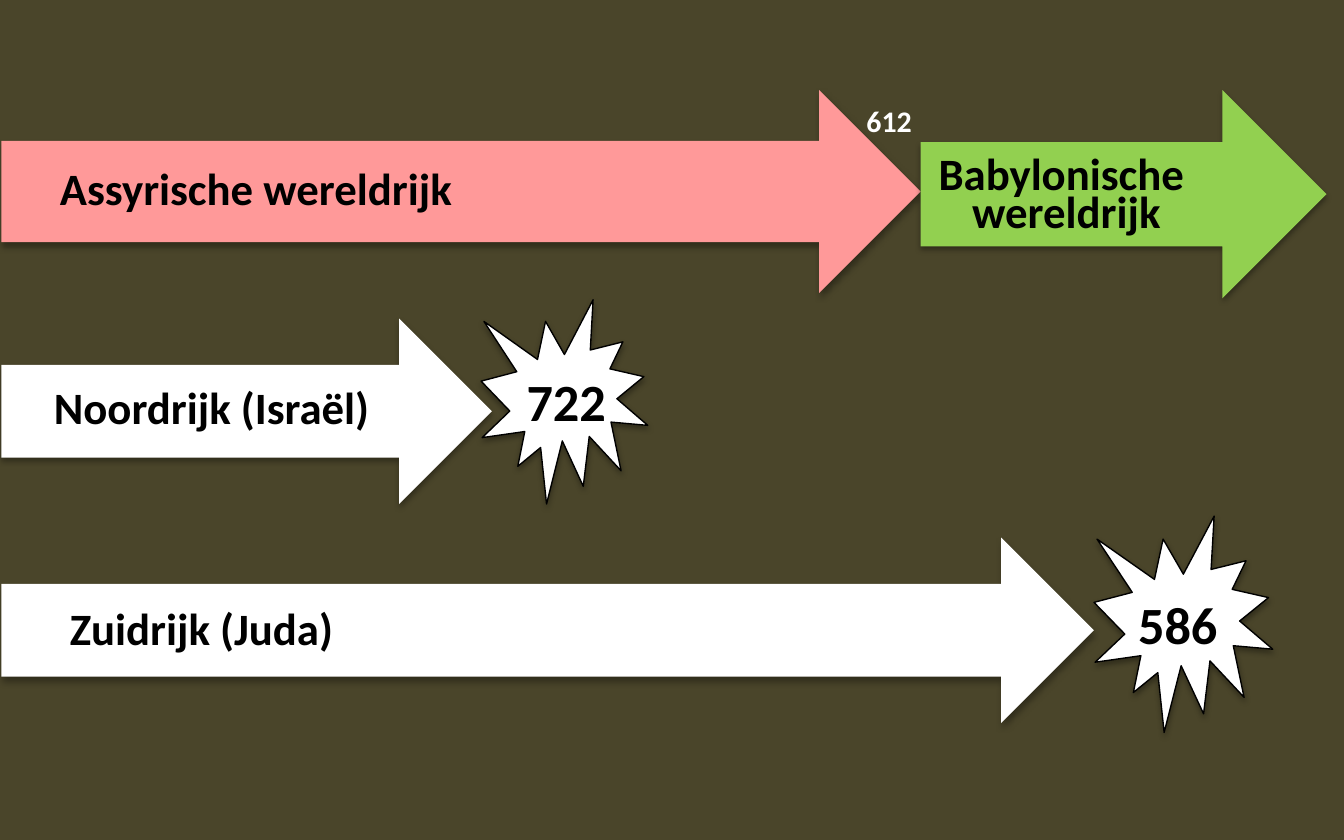
from pptx import Presentation
from pptx.dml.color import RGBColor
from pptx.enum.shapes import MSO_SHAPE as SHAPE
from pptx.enum.text import MSO_AUTO_SIZE, PP_ALIGN
from pptx.util import Inches, Pt

COLORS = {
    "background": "4A452A",
    "white": "FFFFFF",
    "black": "000000",
    "assyria": "FF9999",
    "babylon": "92D050",
}
FONT = "Calibri"

# Empires and kingdoms: left, top, width, height, fill
ARROWS = [
    (0.01, 2.37, 3.65, 1.38, "white"),
    (0.01, 0.67, 6.84, 1.51, "assyria"),
    (0.01, 4, 8.13, 1.38, "white"),
    (6.85, 0.67, 3.02, 1.55, "babylon"),
]
# Falls of the two kingdoms: left, top, width, height
BURSTS = [(3.58, 2.23, 1.24, 1.52), (8.14, 3.84, 1.33, 1.61)]

# Centred labels: text, left, top, width, height, size, colour
LABELS = [
    ("Assyrische wereldrijk", -0.41, 1.27, 4.63, 0.38, 24, "black"),
    ("Noordrijk (Israël)", -0.74, 2.9, 4.63, 0.38, 24, "black"),
    ("Zuidrijk (Juda)", -0.58, 4.54, 4.16, 0.38, 24, "black"),
    ("Babylonische \nwereldrijk", 6, 1.16, 3.87, 0.68, 24, "black"),
    ("612", 6.24, 0.7, 0.75, 0.38, 16, "white"),
]
# Years in the bursts: text, left, top
YEARS = [("722", 3.82, 2.7), ("586", 8.37, 4.36)]


def rgb(name):
    return RGBColor.from_string(COLORS[name])


def add_figure(s, kind, box, fill, outlined=False):
    """Filled shape that keeps the soft shadow of the theme."""
    sp = s.shapes.add_shape(kind, *map(Inches, box))
    sp.fill.solid()
    sp.fill.fore_color.rgb = rgb(fill)
    if outlined:
        sp.line.color.rgb = rgb("black")
        sp.line.width = Pt(0.75)
    else:
        sp.line.fill.background()


def add_text(s, text, box, size, color, align=None, spacing=None):
    tf = s.shapes.add_textbox(*map(Inches, box)).text_frame
    tf.word_wrap = True
    tf.auto_size = MSO_AUTO_SIZE.SHAPE_TO_FIT_TEXT
    tf.text = text
    for p in tf.paragraphs:
        p.alignment = align
        p.line_spacing = spacing
        for r in p.runs:
            r.font.name = FONT
            r.font.size = Pt(size)
            r.font.bold = True
            r.font.color.rgb = rgb(color)


prs = Presentation()
prs.slide_width, prs.slide_height = Inches(10), Inches(6.25)
s = prs.slides.add_slide(prs.slide_layouts[6])
s.background.fill.solid()
s.background.fill.fore_color.rgb = rgb("background")

# Arrows and bursts
for *box, fill in ARROWS:
    add_figure(s, SHAPE.RIGHT_ARROW, box, fill)
for box in BURSTS:
    add_figure(s, SHAPE.EXPLOSION1, box, "white", outlined=True)

# Labels and years
for text, *box, size, color in LABELS:
    add_text(s, text, box, size, color, PP_ALIGN.CENTER, Pt(20))
for text, left, top in YEARS:
    add_text(s, text, (left, top, 0.87, 0.57), 28, "black")

prs.save("out.pptx")
